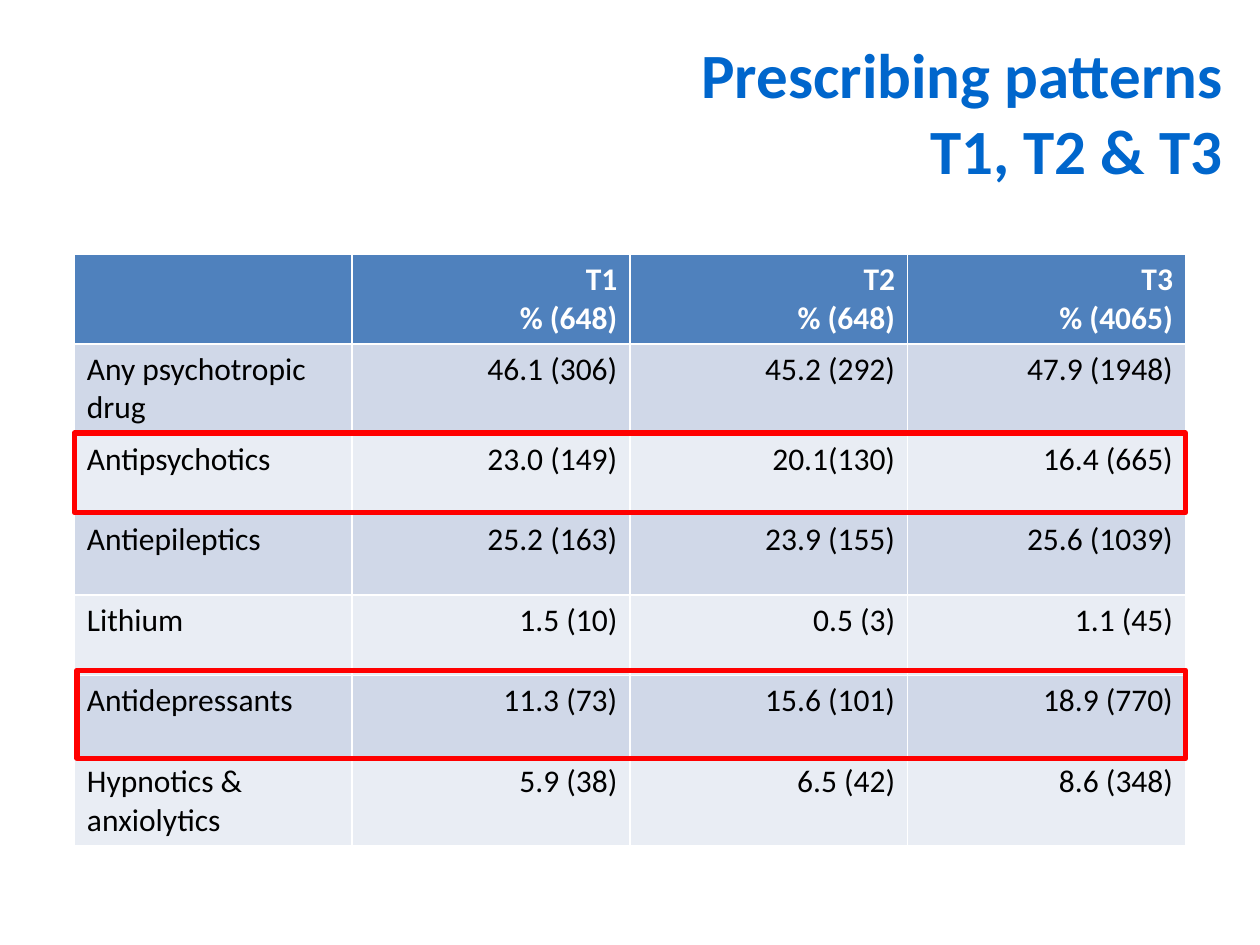
from dataclasses import dataclass

import pptx
import pptx.dml.color
import pptx.enum.shapes
import pptx.enum.text
import pptx.util

Pt = pptx.util.Pt
Align = pptx.enum.text.PP_ALIGN


def rgb(value):
    return pptx.dml.color.RGBColor.from_string(value)


@dataclass(frozen=True)
class Theme:
    font: str = "Calibri"
    title_size: int = 36
    table_size: int = 18
    title: str = "0066CC"
    header: str = "4F81BD"
    bands: tuple = ("D0D8E8", "E9EDF4")
    header_text: str = "FFFFFF"
    body_text: str = "000000"
    highlight: str = "FF0000"


THEME = Theme()

TABLE_LEFT, TABLE_TOP = 42.5, 145.5
COLUMN_WIDTH, ROW_HEIGHT = 158.75, 46.1

ROWS = [
    ("", "T1\n% (648)", "T2\n% (648)", "T3\n% (4065)"),
    ("Any psychotropic drug", "46.1 (306)", "45.2 (292)", "47.9 (1948)"),
    ("Antipsychotics", "23.0 (149)", "20.1(130)", "16.4 (665)"),
    ("Antiepileptics", "25.2 (163)", "23.9 (155)", "25.6 (1039)"),
    ("Lithium", "1.5 (10)", "0.5 (3)", "1.1 (45)"),
    ("Antidepressants", "11.3 (73)", "15.6 (101)", "18.9 (770)"),
    ("Hypnotics & anxiolytics", "5.9 (38)", "6.5 (42)", "8.6 (348)"),
]


def format_paragraph(para, size, color, bold, align):
    para.alignment = align
    para.font.name = THEME.font
    para.font.size = Pt(size)
    para.font.bold = bold
    para.font.color.rgb = rgb(color)


def add_title(page, text):
    title = page.shapes.title
    title.left, title.top, title.width, title.height = Pt(241), Pt(9.5), Pt(465), Pt(108)
    title.text_frame.vertical_anchor = pptx.enum.text.MSO_ANCHOR.MIDDLE
    para = title.text_frame.paragraphs[0]
    para.text = text
    format_paragraph(para, THEME.title_size, THEME.title, True, Align.RIGHT)


def fill_cell(cell, text, row, column):
    is_header = row == 0
    cell.fill.solid()
    cell.fill.fore_color.rgb = rgb(THEME.header if is_header else THEME.bands[(row - 1) % 2])
    cell.text = text
    color = THEME.header_text if is_header else THEME.body_text
    align = Align.RIGHT if column else Align.LEFT
    for para in cell.text_frame.paragraphs:
        format_paragraph(para, THEME.table_size, color, is_header, align)


def add_prescribing_table(page):
    columns = len(ROWS[0])
    frame = page.shapes.add_table(
        len(ROWS), columns, Pt(TABLE_LEFT), Pt(TABLE_TOP),
        Pt(columns * COLUMN_WIDTH), Pt(len(ROWS) * ROW_HEIGHT))
    for row, texts in enumerate(ROWS):
        for column, text in enumerate(texts):
            fill_cell(frame.table.cell(row, column), text, row, column)


def add_highlight(page, left, top, width, height):
    """Outline a table row with an unfilled frame."""
    box = page.shapes.add_shape(
        pptx.enum.shapes.MSO_SHAPE.RECTANGLE, Pt(left), Pt(top), Pt(width), Pt(height))
    box.shadow.inherit = False
    box.fill.background()
    box.line.color.rgb = rgb(THEME.highlight)
    box.line.width = Pt(3)


def main():
    deck = pptx.Presentation()
    deck.slide_width, deck.slide_height = Pt(720), Pt(540)
    page = deck.slides.add_slide(deck.slide_layouts[0])
    subtitle = page.placeholders[1].element
    subtitle.getparent().remove(subtitle)

    add_title(page, "Prescribing patterns\vT1, T2 & T3")
    add_prescribing_table(page)
    add_highlight(page, 42.5, 247.5, 635, 45.5)
    add_highlight(page, 44, 383, 633.5, 50.5)
    deck.save("out.pptx")


if __name__ == "__main__":
    main()
